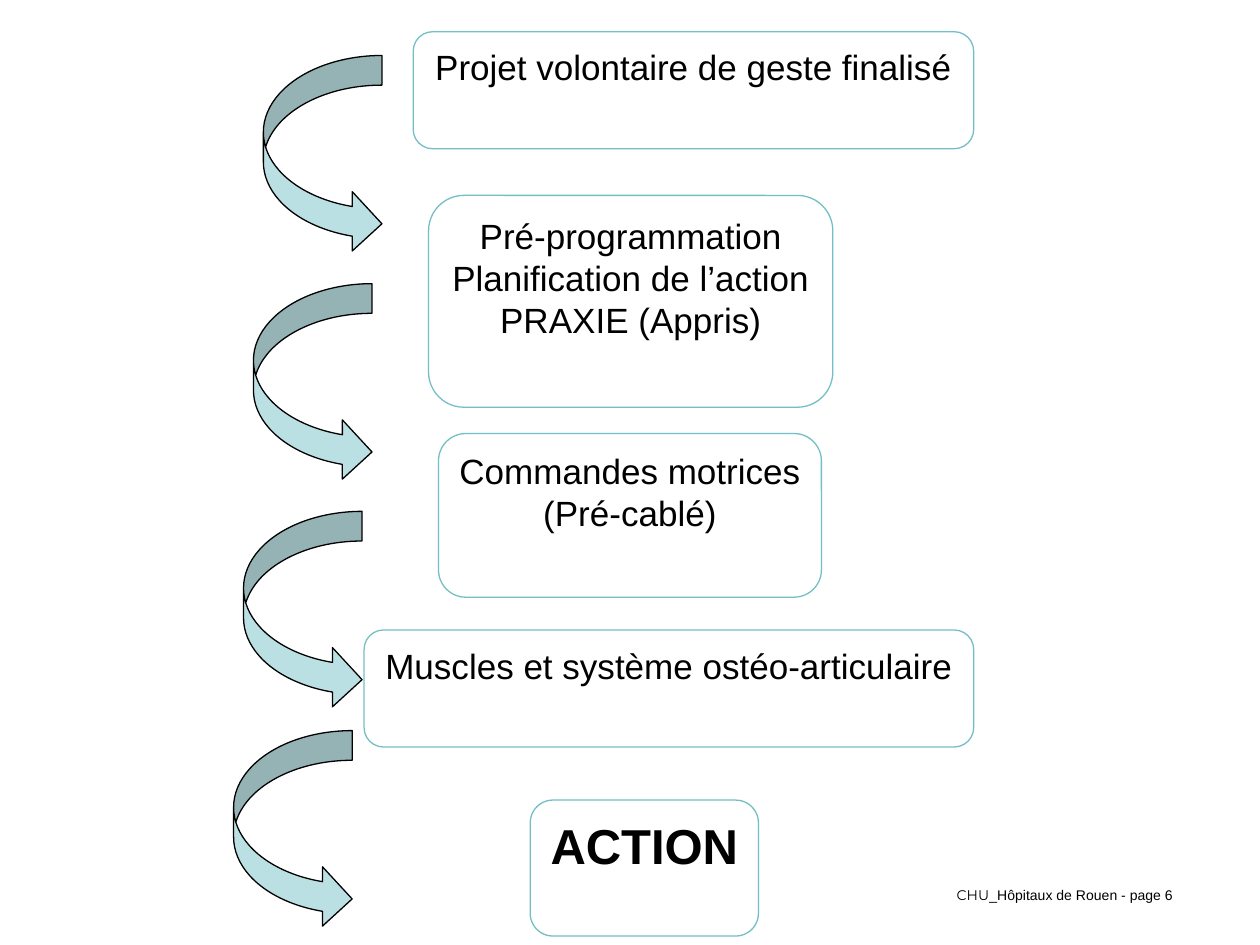
from pptx import Presentation
from pptx import util as u
from pptx.dml.color import RGBColor
from pptx.enum import shapes, text


def color(hex_code):
    return RGBColor.from_string(hex_code)


def add_outlined(kind, left, top, width, height, line_color):
    shape = slide.shapes.add_shape(kind, u.Cm(left), u.Cm(top), u.Cm(width), u.Cm(height))
    shape.shadow.inherit = False
    shape.line.color.rgb = color(line_color)
    shape.line.width = u.Pt(0.75)
    return shape


prs = Presentation()
prs.slide_width, prs.slide_height = u.Cm(25.4), u.Cm(19.05)
slide = prs.slides.add_slide(prs.slide_layouts[6])

# Page footer
footer = slide.shapes.add_textbox(u.Cm(10.36), u.Cm(17.75), u.Cm(13.54), u.Cm(0.58))
footer.text_frame.word_wrap = True
footer_line = footer.text_frame.paragraphs[0]
footer_line.alignment = text.PP_ALIGN.RIGHT
for wording, font_name in [("CHU", "Montserrat"), ("_Hôpitaux de Rouen - page 6", "Arial")]:
    run = footer_line.add_run()
    run.text = wording
    run.font.name = font_name
    run.font.size = u.Pt(8)
    run.font.color.rgb = color("000000")

# Steps from intention to action: wording, left, top, width, height, size, bold
steps = [
    ("Projet volontaire de geste finalisé", 8.33, 0.64, 11.3, 2.36, 20, False),
    ("Pré-programmation\nPlanification de l’action\nPRAXIE (Appris)",
     8.64, 3.94, 8.15, 4.27, 20, False),
    ("Commandes motrices\n(Pré-cablé)", 8.84, 8.74, 7.72, 3.3, 20, False),
    ("Muscles et système ostéo-articulaire", 7.34, 12.7, 12.29, 2.36, 20, False),
    ("ACTION", 10.69, 16.13, 4.6, 2.74, 28, True),
]
for wording, left, top, width, height, size, bold in steps:
    step = add_outlined(shapes.MSO_SHAPE.ROUNDED_RECTANGLE, left, top, width, height, "72BFC5")
    step.fill.background()
    frame = step.text_frame
    frame.text = wording
    frame.word_wrap = False
    frame.vertical_anchor = text.MSO_ANCHOR.TOP
    frame.margin_top = u.Cm(0.17)
    for paragraph in frame.paragraphs:
        paragraph.alignment = text.PP_ALIGN.CENTER
        for run in paragraph.runs:
            run.font.name = "Arial"
            run.font.size = u.Pt(size)
            run.font.bold = bold
            run.font.color.rgb = color("000000")

# Curved arrows, each a little further left than the one above
for index, top in enumerate([1.12, 5.72, 10.31, 14.73]):
    arrow = add_outlined(shapes.MSO_SHAPE.CURVED_RIGHT_ARROW,
                         5.31 - 0.2 * index, top, 2.39, 3.99, "000000")
    arrow.fill.solid()
    arrow.fill.fore_color.rgb = color("BBE0E3")

prs.save("out.pptx")
